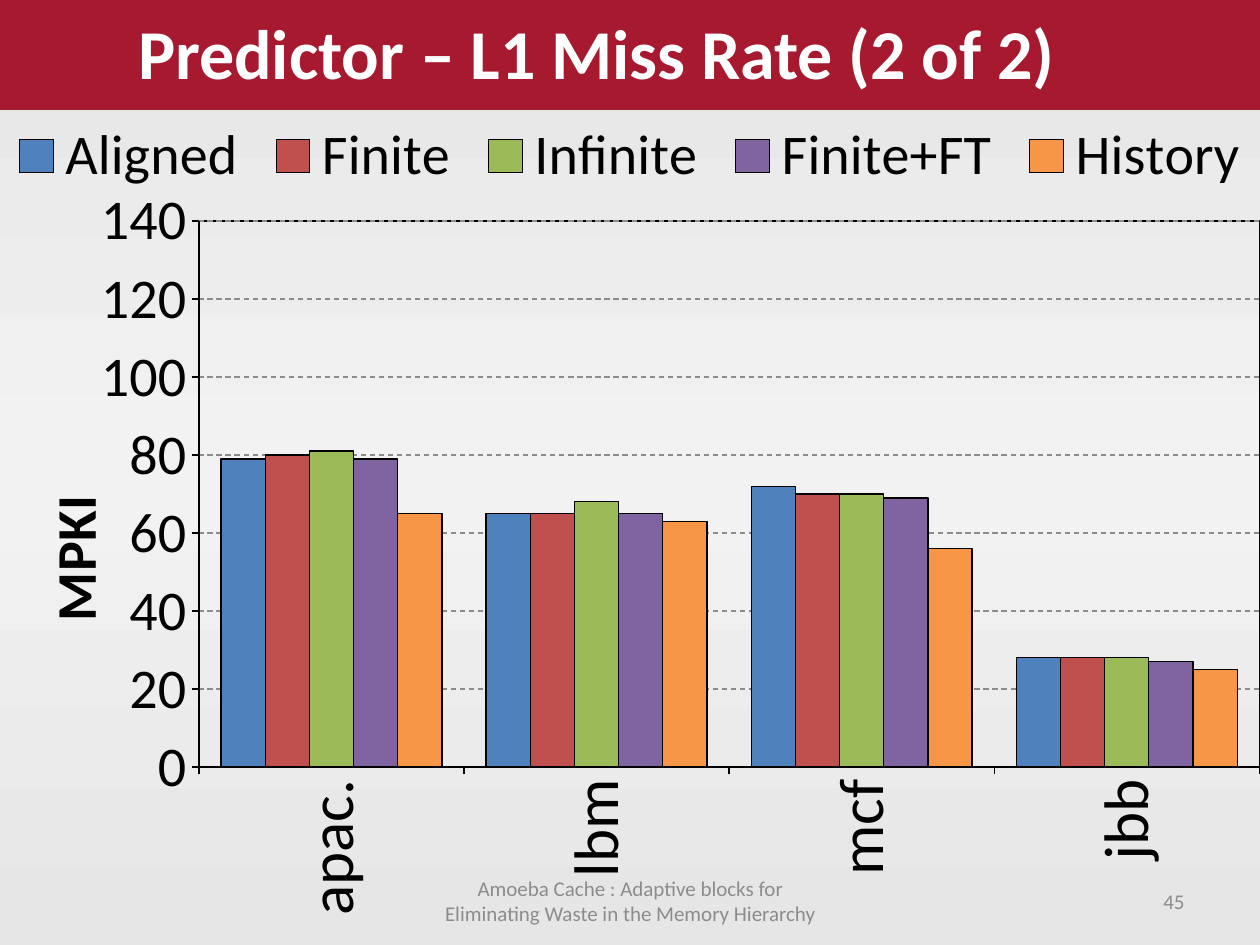
import copy

import pptx
import pptx.chart.data
import pptx.dml.color
import pptx.enum.chart
import pptx.enum.dml
import pptx.enum.text
import pptx.oxml
import pptx.oxml.ns
import pptx.util

RGB = pptx.dml.color.RGBColor
Pt = pptx.util.Pt
qn = pptx.oxml.ns.qn
ALIGN = pptx.enum.text.PP_ALIGN
XL = pptx.enum.chart

WIDTH, HEIGHT = 1260, 945
PX = 914400 // 126
FONT = "Calibri"

BLACK = RGB(0x00, 0x00, 0x00)
WHITE = RGB(0xFF, 0xFF, 0xFF)
GREY = RGB(0x8C, 0x8C, 0x8C)
CRIMSON = RGB(0xA6, 0x19, 0x2E)
EDGE = RGB(0xE6, 0xE6, 0xE6)
MIDDLE = RGB(0xF2, 0xF2, 0xF2)

TITLE = "Predictor – L1 Miss Rate (2 of 2)"
FOOTERS = [
    ("Amoeba Cache : Adaptive blocks for Eliminating Waste in the Memory Hierarchy",
     (431, 876, 399, 50), ALIGN.CENTER),
    ("45", (903, 876, 294, 50), ALIGN.RIGHT),
]
CATEGORIES = ["apac.", "lbm", "mcf", "jbb"]
SERIES = [
    ("Aligned", (79, 65, 72, 28), RGB(0x4F, 0x81, 0xBD)),
    ("Finite", (80, 65, 70, 28), RGB(0xC0, 0x50, 0x4D)),
    ("Infinite", (81, 68, 70, 28), RGB(0x9B, 0xBB, 0x59)),
    ("Finite+FT", (79, 65, 69, 27), RGB(0x80, 0x64, 0xA2)),
    ("History", (65, 63, 56, 25), RGB(0xF7, 0x96, 0x46)),
]
CHART_BOX = (0, 110, 1260, 835)
VALUE_AXIS = {"minimum_scale": 0, "maximum_scale": 140, "major_unit": 20,
              "major_tick_mark": XL.XL_TICK_MARK.OUTSIDE}


def emu(box):
    return [v * PX for v in box]


def set_attrs(obj, **values):
    for name, value in values.items():
        setattr(obj, name, value)


def style_font(font, size, color=BLACK, bold=False):
    set_attrs(font, name=FONT, size=Pt(size), bold=bold)
    font.color.rgb = color


def style_line(line, color=BLACK):
    line.width = Pt(0.75)
    line.color.rgb = color


def manual_layout(x, y, w=None, h=None, inner=False):
    """Build a c:layout element from fractions of the chart's size."""
    parts = [("layoutTarget", "inner")] if inner else []
    parts += [("xMode", "edge"), ("yMode", "edge"), ("x", x), ("y", y)]
    parts += [(tag, v) for tag, v in (("w", w), ("h", h)) if v is not None]
    body = "".join(f'<c:{tag} val="{v}"/>' for tag, v in parts)
    return pptx.oxml.parse_xml(
        f'<c:layout {pptx.oxml.ns.nsdecls("c")}>'
        f"<c:manualLayout>{body}</c:manualLayout></c:layout>")


def place(element, layout, after=None):
    """Put a layout in a chart element, first or after the named child."""
    for old in element.findall(qn("c:layout")):
        element.remove(old)
    index = 0 if after is None else element.index(element.find(qn(after))) + 1
    element.insert(index, layout)


def paint_background(s):
    fill = s.background.fill
    fill.gradient()
    fill.gradient_angle = 90
    for stop, color, position in zip(fill.gradient_stops, (EDGE, MIDDLE), (0, 0.5)):
        stop.color.rgb = color
        stop.position = position
    stops = s.background._cSld.find(".//" + qn("a:gsLst"))
    last = copy.deepcopy(stops[0])
    last.set("pos", "100000")
    stops.append(last)


def add_footer(s, text, box, align):
    tf = s.shapes.add_textbox(*emu(box)).text_frame
    set_attrs(tf, word_wrap=True, vertical_anchor=pptx.enum.text.MSO_ANCHOR.MIDDLE)
    p = tf.paragraphs[0]
    p.alignment = align
    r = p.add_run()
    r.text = text
    style_font(r.font, 12, GREY)


def format_title(sp):
    set_attrs(sp, **dict(zip(("left", "top", "width", "height"),
                             emu((0, -6, WIDTH, 116)))))
    sp.fill.solid()
    sp.fill.fore_color.rgb = CRIMSON
    tf = sp.text_frame
    set_attrs(tf, margin_left=138 * PX, word_wrap=True,
              vertical_anchor=pptx.enum.text.MSO_ANCHOR.MIDDLE)
    p = tf.paragraphs[0]
    p.alignment = ALIGN.LEFT
    r = p.add_run()
    r.text = TITLE
    style_font(r.font, 40, WHITE, True)


def add_miss_rate_chart(s):
    data = pptx.chart.data.CategoryChartData(number_format="#,##0")
    data.categories = CATEGORIES
    for name, values, _ in SERIES:
        data.add_series(name, values)
    chart = s.shapes.add_chart(XL.XL_CHART_TYPE.COLUMN_CLUSTERED,
                               *emu(CHART_BOX), data).chart
    chart.has_title = False
    style_font(chart.font, 10)

    plot = chart.plots[0]
    set_attrs(plot, gap_width=100, overlap=0, vary_by_categories=False)
    for series, (_, _, color) in zip(plot.series, SERIES):
        series.format.fill.solid()
        series.format.fill.fore_color.rgb = color
        style_line(series.format.line)

    chart.has_legend = True
    legend = chart.legend
    set_attrs(legend, position=XL.XL_LEGEND_POSITION.TOP, include_in_layout=False)
    style_font(legend.font, 32)
    place(legend._element, manual_layout(0, 0.01, 1, 0.09), "c:legendPos")

    cat, val = chart.category_axis, chart.value_axis
    for axis, size in ((cat, 36), (val, 32)):
        style_font(axis.tick_labels.font, size)
        style_line(axis.format.line)
    cat.major_tick_mark = XL.XL_TICK_MARK.OUTSIDE
    cat._element.find(qn("c:txPr")).find(qn("a:bodyPr")).set("rot", "-5400000")
    set_attrs(val, **VALUE_AXIS)
    set_attrs(val.tick_labels, number_format="#,##0", number_format_is_linked=False)
    grid = val.major_gridlines.format.line
    style_line(grid, GREY)
    grid.dash_style = pptx.enum.dml.MSO_LINE.DASH

    title = val.axis_title
    r = title.text_frame.paragraphs[0].add_run()
    r.text = "MPKI"
    style_font(r.font, 32, bold=True)
    title.text_frame._txBody.find(qn("a:bodyPr")).set("rot", "-5400000")
    place(title._element, manual_layout(0.02, 0.45), "c:tx")

    area = chart._chartSpace.chart.plotArea
    place(area, manual_layout(0.158, 0.133, 0.842, 0.654, inner=True))
    area.append(pptx.oxml.parse_xml(
        f'<c:spPr {pptx.oxml.ns.nsdecls("c", "a")}><a:noFill/><a:ln w="9525">'
        f'<a:solidFill><a:srgbClr val="{BLACK}"/></a:solidFill></a:ln></c:spPr>'))


def main():
    prs = pptx.Presentation()
    set_attrs(prs, slide_width=WIDTH * PX, slide_height=HEIGHT * PX)
    s = prs.slides.add_slide(prs.slide_layouts.get_by_name("Title Only"))
    paint_background(s)
    for footer in FOOTERS:
        add_footer(s, *footer)
    format_title(s.shapes.title)
    add_miss_rate_chart(s)
    prs.save("out.pptx")


if __name__ == "__main__":
    main()
